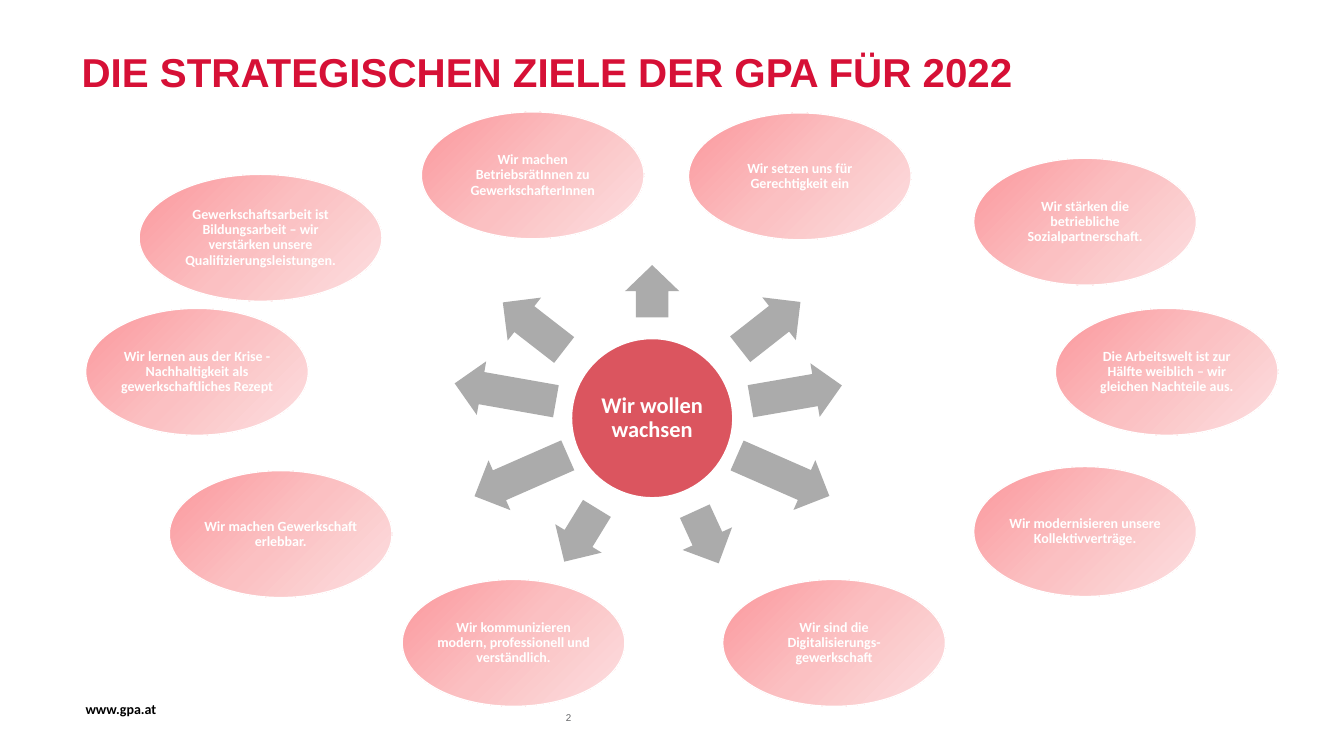
"""Build the slide on the strategic goals: a hub, its arrows and ten goals."""
from copy import deepcopy
from math import cos, radians, sin

from pptx import Presentation
from pptx.dml.color import RGBColor
from pptx.enum.shapes import MSO_SHAPE
from pptx.enum.text import MSO_ANCHOR, MSO_AUTO_SIZE, PP_ALIGN
from pptx.util import Inches, Pt

RED = RGBColor(0xD6, 0x10, 0x36)
HUB_RED = RGBColor(0xDB, 0x55, 0x5F)
ARROW_GREY = RGBColor(0xAB, 0xAB, 0xAB)
NUMBER_GREY = RGBColor(0x64, 0x65, 0x67)
WHITE = RGBColor(0xFF, 0xFF, 0xFF)
BLACK = RGBColor(0x00, 0x00, 0x00)
DEEP_PINK = RGBColor(0xFB, 0x97, 0x9C)
MIDDLE_PINK = RGBColor(0xFB, 0xC0, 0xC2)
PALE_PINK = RGBColor(0xFC, 0xE0, 0xE1)

deck = Presentation()
deck.slide_width, deck.slide_height = Inches(13.33), Inches(7.5)
page = deck.slides.add_slide(deck.slide_layouts[5])
CELL = deck.slide_width / 40


def grid(*cells):
    """Turn grid cells into lengths."""
    return [round(cell * CELL) for cell in cells]


def write(shape, text, size, color, font="Calibri", bold=True, align=PP_ALIGN.CENTER,
          anchor=MSO_ANCHOR.MIDDLE, margins=(0, 0, 0, 0), spacing=None):
    """Write formatted text, one paragraph for each line."""
    frame = shape.text_frame
    frame.word_wrap = True
    frame.auto_size = MSO_AUTO_SIZE.NONE
    frame.vertical_anchor = anchor
    (frame.margin_left, frame.margin_top,
     frame.margin_right, frame.margin_bottom) = [Inches(margin) for margin in margins]
    for index, line in enumerate(text.split("\n")):
        para = frame.add_paragraph() if index else frame.paragraphs[0]
        para.alignment = align
        para.line_spacing = spacing
        span = para.add_run()
        span.text = line
        span.font.name, span.font.size, span.font.bold = font, Pt(size), bold
        span.font.color.rgb = color


title = page.shapes.title
title.left, title.top, title.width, title.height = grid(2.43, 1.41, 29.4, 3.24)
write(title, "DIE STRATEGISCHEN ZIELE DER GPA FÜR 2022", 28.8, RED, font="Arial",
      align=PP_ALIGN.LEFT, anchor=MSO_ANCHOR.TOP, margins=(0, 0, 0, 0.05))

website = page.shapes.add_textbox(*grid(2.25, 20.7, 12, 0.81))
write(website, "www.gpa.at", 10, BLACK, align=PP_ALIGN.LEFT,
      anchor=MSO_ANCHOR.TOP, margins=(0.1, 0.05, 0.1, 0.05))
page_number = page.shapes.add_textbox(*grid(0, 21.18, 33.84, 0.33))
write(page_number, "2", 7, NUMBER_GREY, font="Arial", bold=False, anchor=MSO_ANCHOR.TOP)

HUB_X, HUB_Y = 19.41, 12.45
HUB_WIDTH, HUB_HEIGHT = 4.8, 4.74
hub = page.shapes.add_shape(
    MSO_SHAPE.OVAL,
    *grid(HUB_X - HUB_WIDTH / 2, HUB_Y - HUB_HEIGHT / 2, HUB_WIDTH, HUB_HEIGHT))
hub.shadow.inherit = False
hub.fill.solid()
hub.fill.fore_color.rgb = HUB_RED
hub.line.color.rgb = WHITE
hub.line.width = Pt(1)
write(hub, "Wir wollen wachsen", 16, WHITE, margins=(0.02,) * 4, spacing=0.9)

ARROW_HEIGHT = 1.62
arrows = [
    (270, 3.78, 1.56),
    (321.9, 4.47, 2.28),
    (350.2, 4.35, 2.76),
    (23.7, 4.26, 3),
    (65.4, 3.9, 1.71),
    (121.5, 4.08, 1.86),
    (156.3, 4.26, 3.03),
    (190, 4.44, 3.06),
    (217.8, 4.47, 2.31),
]
for angle, distance, length in arrows:
    middle_x = HUB_X + distance * cos(radians(angle))
    middle_y = HUB_Y + distance * sin(radians(angle))
    arrow = page.shapes.add_shape(
        MSO_SHAPE.RIGHT_ARROW,
        *grid(middle_x - length / 2, middle_y - ARROW_HEIGHT / 2, length, ARROW_HEIGHT))
    arrow.rotation = angle
    arrow.adjustments[0], arrow.adjustments[1] = 0.6, 0.5
    arrow.shadow.inherit = False
    arrow.fill.solid()
    arrow.fill.fore_color.rgb = ARROW_GREY
    arrow.line.fill.background()

GOAL_WIDTH, GOAL_HEIGHT = 6.63, 3.78
goals = [
    (12.54, 3.33, GOAL_WIDTH, GOAL_HEIGHT, "Wir machen BetriebsrätInnen zu GewerkschafterInnen"),
    (28.98, 4.71, GOAL_WIDTH, GOAL_HEIGHT, "Wir stärken die betriebliche Sozialpartnerschaft."),
    (31.41, 9.18, GOAL_WIDTH, GOAL_HEIGHT,
     "Die Arbeitswelt ist zur Hälfte weiblich – wir gleichen Nachteile aus."),
    (28.98, 13.89, GOAL_WIDTH, 3.87, "Wir modernisieren unsere Kollektivverträge."),
    (21.51, 17.25, GOAL_WIDTH, GOAL_HEIGHT, "Wir sind die Digitalisierungs-gewerkschaft"),
    (11.97, 17.25, GOAL_WIDTH, GOAL_HEIGHT,
     "Wir kommunizieren modern, professionell und verständlich."),
    (5.04, 14.01, GOAL_WIDTH, GOAL_HEIGHT, "Wir machen Gewerkschaft erlebbar."),
    (2.55, 9.18, GOAL_WIDTH, GOAL_HEIGHT,
     "Wir lernen aus der Krise - Nachhaltigkeit als gewerkschaftliches Rezept"),
    (4.14, 5.19, 7.23, GOAL_HEIGHT,
     "Gewerkschaftsarbeit ist Bildungsarbeit – wir verstärken unsere "
     "Qualifizierungsleistungen."),
    (20.49, 3.36, GOAL_WIDTH, GOAL_HEIGHT, "Wir setzen uns für\nGerechtigkeit ein"),
]
for left, top, width, height, text in goals:
    goal = page.shapes.add_shape(MSO_SHAPE.OVAL, *grid(left, top, width, height))
    goal.shadow.inherit = False
    goal.fill.gradient()
    goal.fill.gradient_angle = 315
    first_stop = goal.fill.gradient_stops[0]
    stop_element = goal.element.xpath(".//a:gs")[0]
    stop_element.addnext(deepcopy(stop_element))
    pinks = zip(goal.fill.gradient_stops, (0, 0.5, 1), (DEEP_PINK, MIDDLE_PINK, PALE_PINK))
    for stop, position, pink in pinks:
        stop.position = position
        stop.color.rgb = pink
    goal.line.color.rgb = WHITE
    goal.line.width = Pt(1)
    write(goal, text, 10, WHITE, margins=(0.01,) * 4, spacing=0.9)

deck.save("out.pptx")
